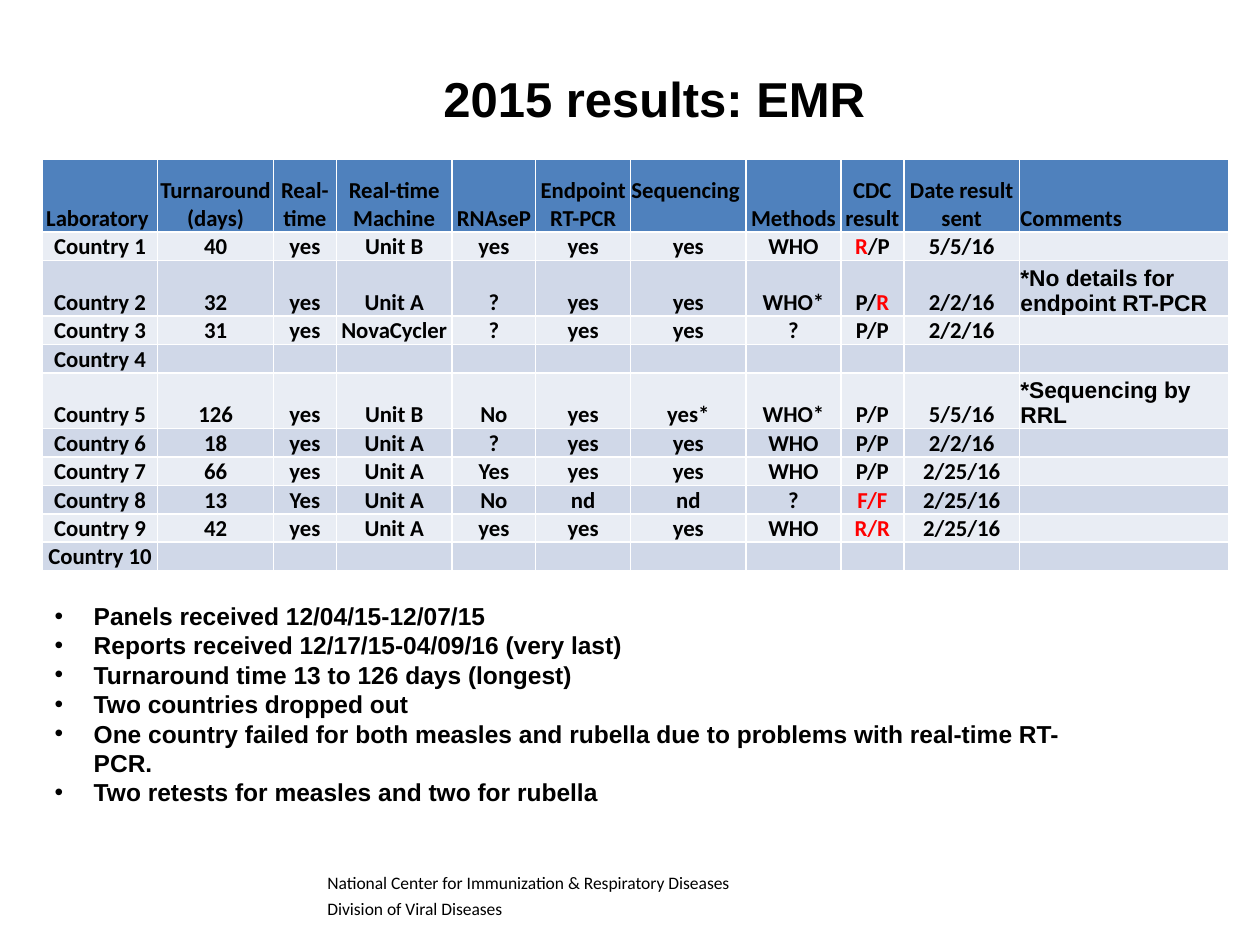
"""Build the 2015 EMR results slide."""
from lxml.etree import SubElement
from pptx import Presentation
from pptx.dml.color import RGBColor
from pptx.enum.text import MSO_ANCHOR, MSO_AUTO_SIZE, PP_ALIGN
from pptx.oxml.ns import qn
from pptx.util import Cm, Pt

HUES = {"ink": "000000", "red": "FF0000", "head": "4F81BD",
        "pale": "E9EDF4", "dark": "D0D8E8", "edge": "FFFFFF"}
LOOKS = {
    "title": {"name": "Arial", "size": Pt(28), "bold": True},
    "point": {"name": "Arial", "size": Pt(14), "bold": True},
    "foot": {"name": "Calibri", "size": Pt(10), "bold": False},
    "cell": {"name": "Calibri", "size": Pt(13), "bold": True},
    "note": {"name": "Arial", "size": Pt(13), "bold": True},
}
CELL = {"margin_left": Cm(0.02), "margin_right": Cm(0.02), "margin_top": Cm(0.02),
        "margin_bottom": 0, "vertical_anchor": MSO_ANCHOR.BOTTOM}


def write(para, text, look):
    """Add text to a paragraph; parts between tildes are red."""
    for num, part in enumerate(text.split("~")):
        if part:
            run = para.add_run()
            run.text = part
            for key, val in LOOKS[look].items():
                setattr(run.font, key, val)
            run.font.color.rgb = RGBColor.from_string(HUES["red" if num % 2 else "ink"])


def add_box(left, top, width, height, wrap=True, fit=MSO_AUTO_SIZE.NONE):
    """Add a text box and return its frame."""
    box = slide.shapes.add_textbox(Cm(left), Cm(top), Cm(width), Cm(height))
    frame = box.text_frame
    frame.word_wrap = wrap
    frame.auto_size = fit
    return frame


deck = Presentation()
deck.slide_width, deck.slide_height = Cm(25.4), Cm(19.05)
slide = deck.slides.add_slide(deck.slide_layouts[6])

points = [
    "Panels received 12/04/15-12/07/15",
    "Reports received 12/17/15-04/09/16 (very last)",
    "Turnaround time 13 to 126 days (longest)",
    "Two countries dropped out",
    "One country failed for both measles and rubella due to problems with real-time RT-PCR.",
    "Two retests for measles and two for rubella",
]
frame = add_box(0.85, 11.99, 21.39, 4.45, fit=MSO_AUTO_SIZE.SHAPE_TO_FIT_TEXT)
for num, text in enumerate(points):
    para = frame.add_paragraph() if num else frame.paragraphs[0]
    props = para._p.get_or_add_pPr()
    props.set("marL", str(Cm(0.79)))
    props.set("indent", str(-Cm(0.79)))
    SubElement(props, qn("a:buFont"), typeface="Arial")
    SubElement(props, qn("a:buChar"), char="•")
    write(para, text, "point")

for top, high, text in [
    (17.45, 0.51, "National Center for Immunization & Respiratory Diseases"),
    (17.98, 0.64, "Division of Viral Diseases"),
]:
    write(add_box(6.35, top, 14.17, high).paragraphs[0], text, "foot")

heads = ["Laboratory ", "Turnaround (days)", "Real-time", "Real-time Machine", "RNAseP",
         "Endpoint RT-PCR", "Sequencing", "Methods", "CDC result", "Date result sent",
         "Comments"]
tests = [
    ["40", "yes", "Unit B", "yes", "yes", "yes", "WHO", "~R~/P", "5/5/16"],
    ["32", "yes", "Unit A", "?", "yes", "yes", "WHO*", "P/~R~", "2/2/16",
     "*No details for endpoint RT-PCR"],
    ["31", "yes", "NovaCycler", "?", "yes", "yes", "?", "P/P", "2/2/16"],
    [],
    ["126", "yes", "Unit B", "No", "yes", "yes*", "WHO*", "P/P", "5/5/16",
     "*Sequencing by RRL"],
    ["18", "yes", "Unit A", "?", "yes", "yes", "WHO", "P/P", "2/2/16"],
    ["66", "yes", "Unit A", "Yes", "yes", "yes", "WHO", "P/P", "2/25/16"],
    ["13", "Yes", "Unit A", "No", "nd", "nd", "?", "~F/F~", "2/25/16"],
    ["42", "yes", "Unit A", "yes", "yes", "yes", "WHO", "~R/R~", "2/25/16"],
    [],
]
rows = [heads] + [[f"Country {num}"] + test for num, test in enumerate(tests, 1)]
wides = [2.33, 2.33, 1.27, 2.33, 1.69, 1.91, 2.33, 1.91, 1.27, 2.33, 4.23]
last = len(heads) - 1
grid = slide.shapes.add_table(len(rows), len(heads), Cm(0.85), Cm(3.21),
                              Cm(sum(wides)), Cm(8.25)).table
grid.first_row = grid.horz_banding = False
for col, wide in zip(grid.columns, wides):
    col.width = Cm(wide)
for r, row in enumerate(rows):
    grid.rows[r].height = Cm(0.43 if r else 1.47)
    fill = ("pale" if r % 2 else "dark") if r else "head"
    for c in range(len(heads)):
        cell = grid.cell(r, c)
        for key, val in CELL.items():
            setattr(cell, key, val)
        for side in ("lnL", "lnR", "lnT", "lnB"):
            line = SubElement(cell._tc.get_or_add_tcPr(), qn(f"a:{side}"), w=str(Pt(1)))
            SubElement(SubElement(line, qn("a:solidFill")), qn("a:srgbClr"), val=HUES["edge"])
        cell.fill.solid()
        cell.fill.fore_color.rgb = RGBColor.from_string(HUES[fill])
        para = cell.text_frame.paragraphs[0]
        para.alignment = PP_ALIGN.LEFT if c == last else PP_ALIGN.CENTER
        look = "note" if r and c == last else "cell"
        if c < len(row):
            write(para, row[c], look)
        tail = SubElement(para._p, qn("a:endParaRPr"), sz="1300")
        SubElement(tail, qn("a:latin"), typeface=LOOKS[look]["name"])
order = grid.cell(0, heads.index("Sequencing"))
order.margin_bottom = Cm(0.56)
order.text_frame.paragraphs[0].alignment = PP_ALIGN.LEFT

frame = add_box(8.69, 1.25, 9.12, 1.45, wrap=False, fit=MSO_AUTO_SIZE.SHAPE_TO_FIT_TEXT)
write(frame.paragraphs[0], "2015 results: EMR", "title")

deck.save("out.pptx")
